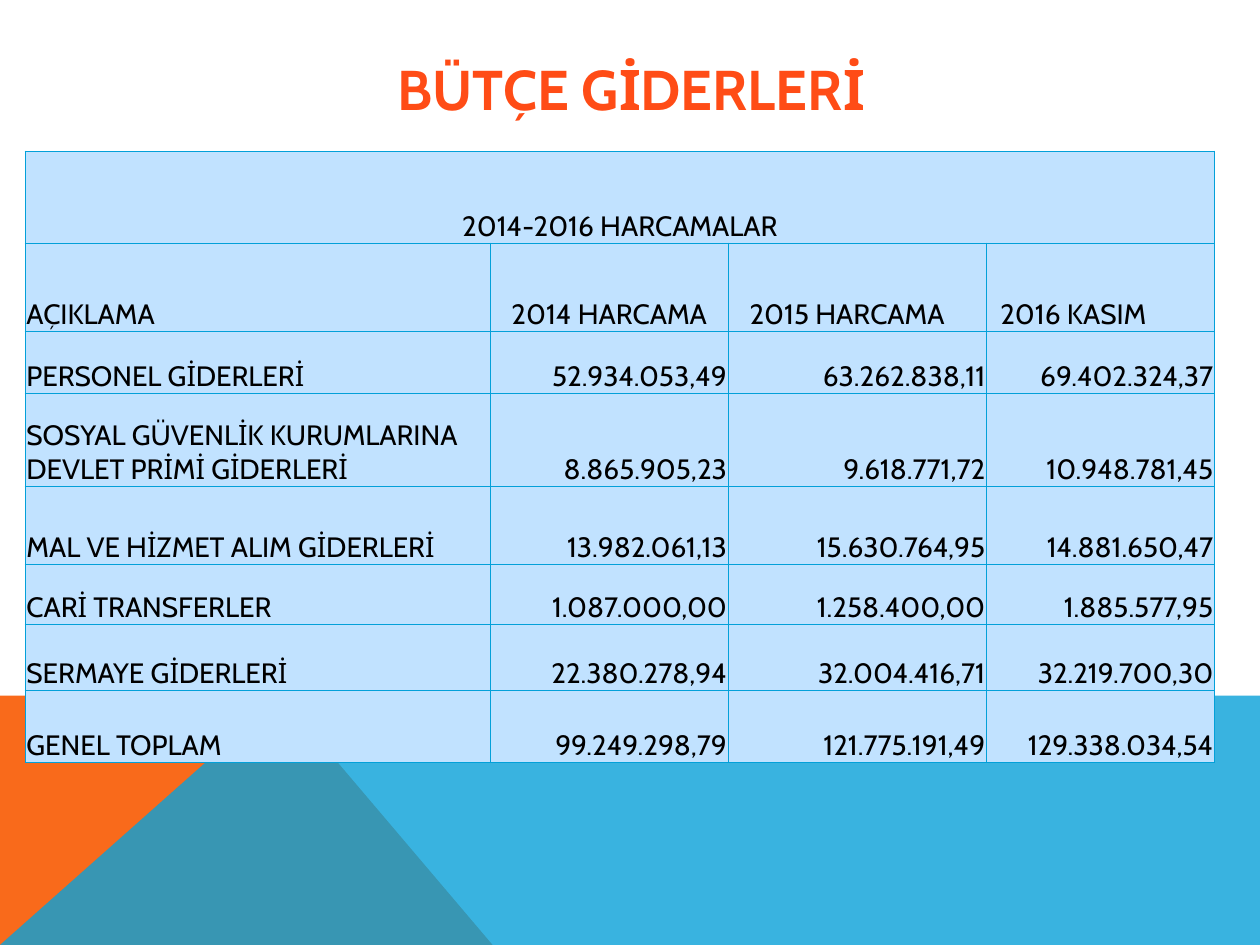
import lxml.etree
import pptx
import pptx.dml.color
import pptx.enum.text
import pptx.oxml.ns
import pptx.util

RGB = pptx.dml.color.RGBColor
ORANGE = RGB(0xF9, 0x6A, 0x1B)
BLUE = RGB(0x08, 0xA1, 0xD9)
RED = RGB(0xFF, 0x4C, 0x16)
PALE = RGB(0xC1, 0xE2, 0xFF)
LINE = RGB(0x03, 0xA0, 0xD9)
BLACK = RGB(0, 0, 0)
ALIGN = pptx.enum.text.PP_ALIGN
ANCHOR = pptx.enum.text.MSO_ANCHOR
qn = pptx.oxml.ns.qn

deck = pptx.Presentation()
deck.slide_width = pptx.util.Inches(10)
deck.slide_height = pptx.util.Inches(7.5)
UNIT = deck.slide_width // 1000  # grid of 1000 columns by 750 rows
slide = deck.slides.add_slide(deck.slide_layouts[6])
shapes = slide.shapes


def write(para, text, size, color, align, bold=False):
    para.alignment = align
    run = para.add_run()
    run.text = text
    run.font.name = "Cabin"
    run.font.size = pptx.util.Pt(size)
    run.font.bold = bold
    run.font.color.rgb = color


# Coloured floor: orange wedge under a translucent blue band
floor = [
    (ORANGE, 100, [(0, 750), (0, 552), (223, 552), (391, 750)]),
    (BLUE, 80, [(0, 750), (223, 552), (1000, 552), (1000, 750)]),
]
for color, alpha, points in floor:
    pen = shapes.build_freeform(*points[0], scale=UNIT)
    pen.add_line_segments(points[1:], close=True)
    area = pen.convert_to_shape()
    area.shadow.inherit = False
    area.line.fill.background()
    area.fill.solid()
    area.fill.fore_color.rgb = color
    if alpha < 100:
        tint = area.fill._xPr.find(qn("a:solidFill"))[0]
        lxml.etree.SubElement(tint, qn("a:alpha"), val=str(alpha * 1000))

# Title
title = shapes.add_textbox(90 * UNIT, 40 * UNIT, 822 * UNIT, 60 * UNIT)
title.text_frame.word_wrap = True
title.text_frame.vertical_anchor = ANCHOR.MIDDLE
write(title.text_frame.paragraphs[0], "BÜTÇE GİDERLERİ", 32, RED, ALIGN.CENTER, True)

# Spending table
data = [
    ("2014-2016 HARCAMALAR", "", "", ""),
    ("AÇIKLAMA", "2014 HARCAMA", "2015 HARCAMA", "2016 KASIM"),
    ("PERSONEL GİDERLERİ", "52.934.053,49", "63.262.838,11", "69.402.324,37"),
    ("SOSYAL GÜVENLİK KURUMLARINA DEVLET PRİMİ GİDERLERİ",
     "8.865.905,23", "9.618.771,72", "10.948.781,45"),
    ("MAL VE HİZMET ALIM GİDERLERİ", "13.982.061,13", "15.630.764,95", "14.881.650,47"),
    ("CARİ TRANSFERLER", "1.087.000,00", "1.258.400,00", "1.885.577,95"),
    ("SERMAYE GİDERLERİ", "22.380.278,94", "32.004.416,71", "32.219.700,30"),
    ("GENEL TOPLAM", "99.249.298,79", "121.775.191,49", "129.338.034,54"),
]
widths = [369, 189, 205, 181]
heights = [73, 70, 49, 74, 62, 48, 52, 57]
indents = [1, 17, 17, 11]  # left margins of the column heads

table = shapes.add_table(len(heights), len(widths), 20 * UNIT, 120 * UNIT,
                         sum(widths) * UNIT, sum(heights) * UNIT).table
for col, width in zip(table.columns, widths):
    col.width = width * UNIT
for row, height in zip(table.rows, heights):
    row.height = height * UNIT
table.cell(0, 0).merge(table.cell(0, len(widths) - 1))

for r, texts in enumerate(data):
    for c, text in enumerate(texts):
        cell = table.cell(r, c)
        cell.fill.solid()
        cell.fill.fore_color.rgb = PALE
        cell.vertical_anchor = ANCHOR.BOTTOM
        cell.margin_left = (indents[c] if r == 1 else 1) * UNIT
        cell.margin_right = cell.margin_top = UNIT
        cell.margin_bottom = 0
        props = cell._tc.get_or_add_tcPr()
        for i, side in enumerate(("lnL", "lnR", "lnT", "lnB")):
            edge = lxml.etree.Element(qn("a:" + side), w=str(pptx.util.Pt(0.75)))
            paint = lxml.etree.SubElement(edge, qn("a:solidFill"))
            lxml.etree.SubElement(paint, qn("a:srgbClr"), val=str(LINE))
            props.insert(i, edge)
        if text:
            align = ALIGN.CENTER if r == 0 else ALIGN.RIGHT if r > 1 and c else ALIGN.LEFT
            write(cell.text_frame.paragraphs[0], text, 16, BLACK, align)

deck.save("out.pptx")
